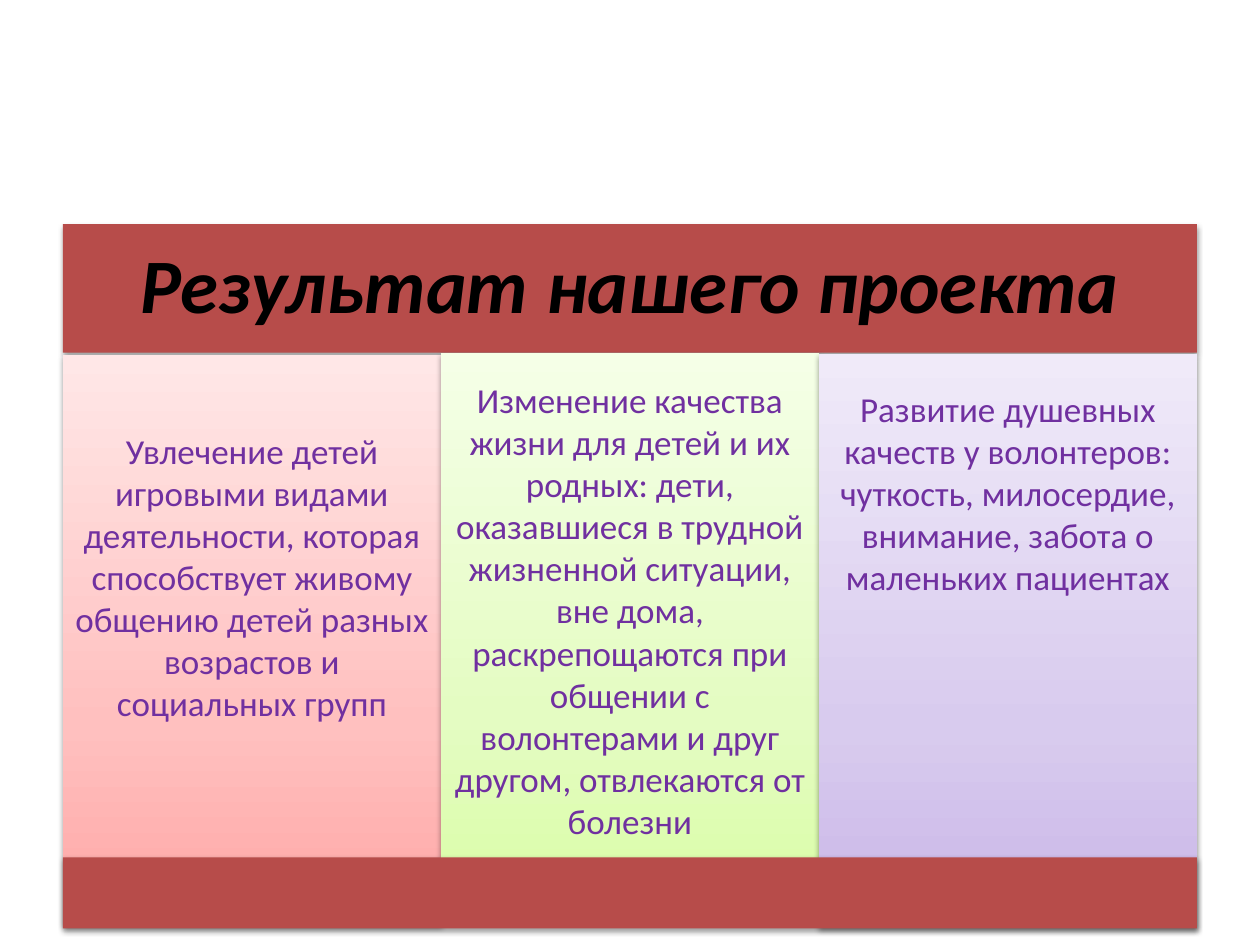
"""Builds a slide with the three results of a volunteer project."""
from copy import deepcopy

from lxml import etree
from pptx import Presentation
from pptx import util as u
from pptx.dml.color import RGBColor
from pptx.enum import shapes, text
from pptx.oxml.ns import qn

COLORS = {"bar": "B74C4A", "title": "000000", "body": "7030A0", "shadow": "000000"}
TITLE = "Результат нашего проекта"
RESULTS = [
    {"words": "Увлечение детей игровыми видами деятельности, которая способствует "
              "живому общению детей разных возрастов и социальных групп",
     "top": 203, "height": 325.5, "text_top": 245.5,
     "gradient": ("FFA6A5", "FFC0BF", "FFE7E7")},
    {"words": "Изменение качества жизни для детей и их родных: дети, оказавшиеся в "
              "трудной жизненной ситуации, вне дома, раскрепощаются при общении с "
              "волонтерами и друг другом, отвлекаются от болезни",
     "top": 202, "height": 317.5, "text_top": 216.5,
     "gradient": ("DAFDA7", "E4FCC2", "F5FFE7")},
    {"words": "Развитие душевных качеств у волонтеров: чуткость, милосердие, "
              "внимание, забота о маленьких пациентах",
     "top": 202.5, "height": 327.5, "text_top": 221.5,
     "gradient": ("C9B5E8", "D8CBEE", "F0EAF9")},
]
STOPS = (0, 0.35, 1)
LEFT, WIDTH = 36, 648
COLUMN = WIDTH / len(RESULTS)


def add_shadow(panel):
    panel.shadow.inherit = False
    effects = panel._element.spPr.find(qn("a:effectLst"))
    outer = etree.SubElement(effects, qn("a:outerShdw"), blurRad="39370",
                             dist="20320", dir="5400000", rotWithShape="0")
    tint = etree.SubElement(outer, qn("a:srgbClr"), val=COLORS["shadow"])
    etree.SubElement(tint, qn("a:alpha"), val="38000")


def add_panel(slide, left, top, width, height, colors):
    panel = slide.shapes.add_shape(shapes.MSO_SHAPE.RECTANGLE, u.Pt(left), u.Pt(top),
                                   u.Pt(width), u.Pt(height))
    panel.line.fill.background()
    if len(colors) == 1:
        panel.fill.solid()
        panel.fill.fore_color.rgb = RGBColor.from_string(colors[0])
    else:
        panel.fill.gradient()
        panel.fill.gradient_angle = 90
        stop_list = panel._element.spPr.find(".//" + qn("a:gsLst"))
        stop_list.insert(1, deepcopy(stop_list[0]))
        for stop, position, color in zip(panel.fill.gradient_stops, STOPS, colors):
            stop.position = position
            stop.color.rgb = RGBColor.from_string(color)
    add_shadow(panel)
    return panel


def write(panel, words, *, size, color, inset, inset_top=None, bold=False,
          italic=False, spacing=1.0, anchor=text.MSO_ANCHOR.TOP):
    frame = panel.text_frame
    frame.word_wrap = True
    frame.vertical_anchor = anchor
    frame.margin_left = frame.margin_right = frame.margin_bottom = u.Pt(inset)
    frame.margin_top = u.Pt(inset if inset_top is None else inset_top)
    paragraph = frame.paragraphs[0]
    paragraph.alignment = text.PP_ALIGN.CENTER
    paragraph.line_spacing = spacing
    run = paragraph.add_run()
    run.text = words
    run.font.name = "Calibri"
    run.font.size = u.Pt(size)
    run.font.bold = bold
    run.font.italic = italic
    run.font.color.rgb = RGBColor.from_string(color)


def main():
    deck = Presentation()
    deck.slide_width, deck.slide_height = u.Pt(720), u.Pt(540)
    slide = deck.slides.add_slide(deck.slide_layouts[6])

    header = add_panel(slide, LEFT, 128, WIDTH, 73.5, [COLORS["bar"]])
    write(header, TITLE, size=44, color=COLORS["title"], inset=13, bold=True,
          italic=True, spacing=0.9, anchor=text.MSO_ANCHOR.MIDDLE)
    for index, result in enumerate(RESULTS):
        column = add_panel(slide, LEFT + index * COLUMN, result["top"], COLUMN,
                           result["height"], result["gradient"])
        write(column, result["words"], size=20, color=COLORS["body"], inset=6,
              inset_top=result["text_top"] - result["top"])
    add_panel(slide, LEFT, 490, WIDTH, 40.5, [COLORS["bar"]])
    deck.save("out.pptx")


if __name__ == "__main__":
    main()
